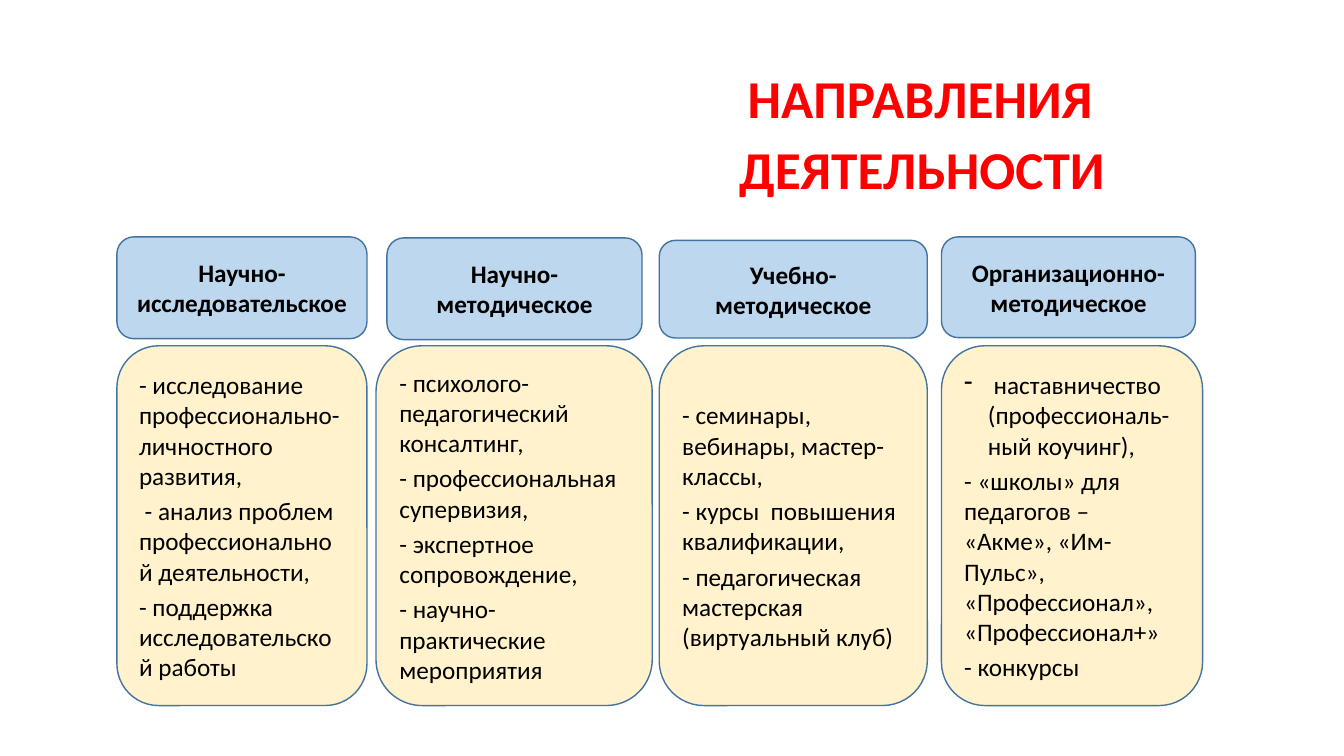
from pptx import Presentation
from pptx.dml.color import RGBColor
from pptx.enum.shapes import MSO_SHAPE
from pptx.enum.text import MSO_ANCHOR, PP_ALIGN
from pptx.util import Pt
from lxml import etree

ROUND = MSO_SHAPE.ROUNDED_RECTANGLE
MIDDLE, TOP = MSO_ANCHOR.MIDDLE, MSO_ANCHOR.TOP
LEFT, CENTER, RIGHT = PP_ALIGN.LEFT, PP_ALIGN.CENTER, PP_ALIGN.RIGHT
NS = "http://schemas.openxmlformats.org/drawingml/2006/main"

COLORS = {
    "title": "FF0000",
    "text": "000000",
    "head": "BDD7EE",
    "body": "FFF2CC",
    "line": "43739E",
}

TITLE = ["НАПРАВЛЕНИЯ ", "ДЕЯТЕЛЬНОСТИ"]
BODY_TOP, BODY_HIGH = 247, 257

COLUMNS = [
    {
        "head": "Научно-исследовательское",
        "head_box": (83.5, 169.2, 178.6, 72.7),
        "body": [
            "- исследование профессионально-личностного развития,",
            " - анализ проблем профессиональной деятельности,",
            "- поддержка исследовательской работы",
        ],
        "left": 83.5, "wide": 178.6,
    },
    {
        "head": "Научно-методическое",
        "head_box": (276.4, 169.9, 182.2, 72.7),
        "body": [
            "- психолого-педагогический консалтинг,",
            "- профессиональная супервизия,",
            "- экспертное сопровождение,",
            "- научно-практические мероприятия",
        ],
        "left": 268.6, "wide": 197.3,
    },
    {
        "head": "Учебно-методическое",
        "head_box": (470.9, 171.7, 191.5, 69.8),
        "body": [
            "- семинары, вебинары, мастер-классы,",
            "- курсы  повышения квалификации,",
            "- педагогическая мастерская (виртуальный клуб)",
        ],
        "left": 470.9, "wide": 191.5,
    },
    {
        "head": "Организационно-методическое",
        "head_box": (672.5, 169.2, 181.4, 72),
        "body": [
            " наставничество (профессиональ-ный коучинг),",
            "- «школы» для педагогов – «Акме», «Им-Пульс», "
            "«Профессионал», «Профессионал+»",
            "- конкурсы",
        ],
        "left": 672.5, "wide": 186.5,
        "dash": True,
    },
]


def color(name):
    return RGBColor.from_string(COLORS[name])


def add_dash(para, indent):
    props = para._p.get_or_add_pPr()
    props.set("marL", str(Pt(indent)))
    props.set("indent", str(-Pt(indent)))
    etree.SubElement(props, f"{{{NS}}}buFontTx")
    etree.SubElement(props, f"{{{NS}}}buChar", char="-")


def write(frame, lines, size, tint, align, anchor, bold=False, gap=0, pitch=None):
    frame.word_wrap = True
    frame.vertical_anchor = anchor
    for i, line in enumerate(lines):
        para = frame.add_paragraph() if i else frame.paragraphs[0]
        para.text = line
        para.alignment = align
        if i:
            para.space_before = Pt(gap)
        if pitch:
            para.line_spacing = pitch
        font = para.runs[0].font
        font.name = "Calibri"
        font.size = Pt(size)
        font.bold = bold
        font.color.rgb = color(tint)


def add_title(slide, box):
    shape = slide.shapes.add_textbox(*map(Pt, box))
    write(shape.text_frame, TITLE, 38, "title", RIGHT, TOP,
          bold=True, gap=10, pitch=0.9)


def add_card(slide, box, fill):
    shape = slide.shapes.add_shape(ROUND, *map(Pt, box))
    shape.shadow.inherit = False
    shape.fill.solid()
    shape.fill.fore_color.rgb = color(fill)
    shape.line.color.rgb = color("line")
    shape.line.width = Pt(1)
    return shape.text_frame


def add_head(slide, box, text):
    frame = add_card(slide, box, "head")
    write(frame, [text], 18, "text", CENTER, MIDDLE, bold=True)


def add_body(slide, box, lines, dash):
    frame = add_card(slide, box, "body")
    write(frame, lines, 18, "text", LEFT, MIDDLE, gap=3.6)
    if dash:
        add_dash(frame.paragraphs[0], 17)


def main():
    deck = Presentation()
    deck.slide_width, deck.slide_height = Pt(960), Pt(540)
    slide = deck.slides.add_slide(deck.slide_layouts[6])
    add_title(slide, (105.8, 48.2, 690.5, 105.8))
    for col in COLUMNS:
        add_head(slide, col["head_box"], col["head"])
        box = (col["left"], BODY_TOP, col["wide"], BODY_HIGH)
        add_body(slide, box, col["body"], col.get("dash", False))
    deck.save("out.pptx")


if __name__ == "__main__":
    main()
